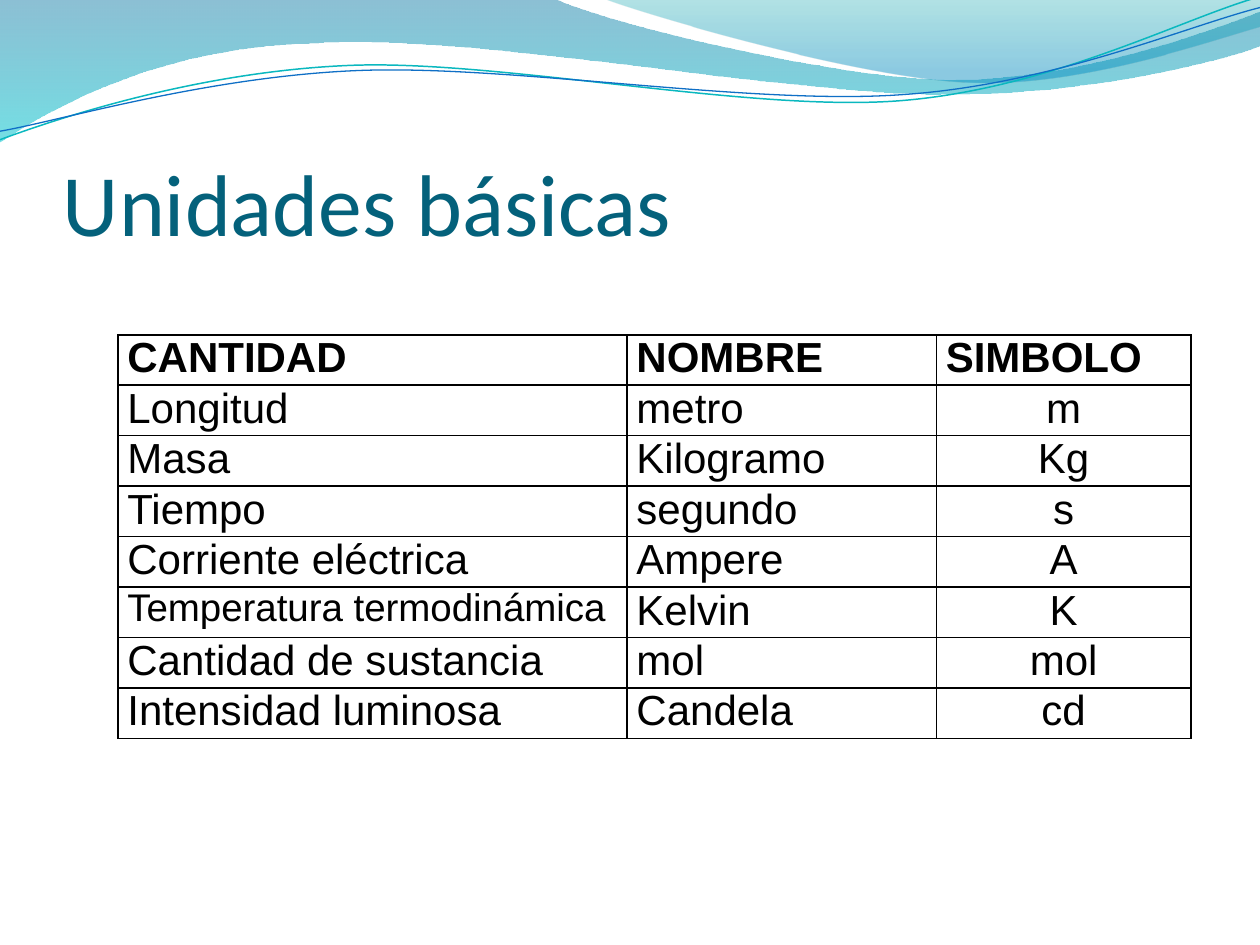
from dataclasses import dataclass

from lxml import etree
from pptx import Presentation
from pptx.dml.color import RGBColor
from pptx.enum.text import MSO_ANCHOR, PP_ALIGN
from pptx.oxml.ns import qn
from pptx.util import Pt

LEFT, CENTER = PP_ALIGN.LEFT, PP_ALIGN.CENTER
BOTTOM, TOP = MSO_ANCHOR.BOTTOM, MSO_ANCHOR.TOP
COLUMN_WIDTHS = (290.9, 176.8, 145.4)
BLACK = "000000"

Point = tuple[float, float]
Segment = tuple[Point, ...]


@dataclass(frozen=True)
class GradientStop:
    position: float
    color: str
    opacity: int


@dataclass(frozen=True)
class Wave:
    start: Point
    segments: tuple[Segment, ...]
    stops: tuple[GradientStop, ...] = ()
    line_color: str = ""
    line_width: float = 0
    rotation: float = 0


@dataclass(frozen=True)
class BaseUnit:
    quantity: str
    name: str
    symbol: str
    quantity_size: float = 24


WAVES = (
    Wave(
        (0, 0),
        (
            ((316.8, -0.7),),
            ((342.7, 12.2), (478.1, 45.4), (545.8, 45.4)),
            ((614.2, 45.4), (689.8, 18.7), (720, 6.5)),
            ((720.7, 25.9),),
            ((707.8, 31.7), (626.4, 54.7), (537.1, 54)),
            ((447.8, 54), (275, 20.2), (185, 24.5)),
            ((92.9, 25.9), (33.1, 59.8), (-0.7, 81.4)),
            ((0, 0),),
        ),
        stops=(GradientStop(0, "0074A1", 45), GradientStop(1, "00C6CF", 55)),
    ),
    Wave(
        (344.9, -0.7),
        (
            ((366.5, 7.9), (491, 44.6), (553.7, 46.8)),
            ((616.3, 49.7), (691.9, 23), (720, 15.1)),
            ((720, 0),),
            ((344.9, -0.7),),
        ),
        stops=(GradientStop(0, "00A1A9", 30), GradientStop(0.8, "008BBF", 45)),
    ),
    Wave(
        (-1.4, 62.9),
        (
            ((33.8, 51.7), (114.1, 29.4), (199.8, 29.9)),
            ((284.9, 30.3), (425.8, 67.3), (512.4, 64.9)),
            ((599, 62.4), (676.5, 25.7), (720.2, 15.5)),
        ),
        line_color="0AB8BF",
        line_width=0.85,
        rotation=357.3,
    ),
    Wave(
        (-1.1, 58),
        (
            ((32.9, 53.8), (118.3, 32.5), (204.1, 33)),
            ((290.6, 33.4), (428.9, 63.8), (515.5, 61.4)),
            ((601.3, 59.6), (678.5, 30.1), (721.4, 21.3)),
        ),
        line_color="0F6FC6",
        line_width=0.75,
        rotation=357.3,
    ),
)

HEADINGS = ("CANTIDAD", "NOMBRE", "SIMBOLO")
BASE_UNITS = (
    BaseUnit("Longitud", "metro", "m"),
    BaseUnit("Masa", "Kilogramo", "Kg"),
    BaseUnit("Tiempo", "segundo", "s"),
    BaseUnit("Corriente eléctrica", "Ampere", "A"),
    BaseUnit("Temperatura termodinámica", "Kelvin", "K", 22),
    BaseUnit("Cantidad de sustancia", "mol", "mol"),
    BaseUnit("Intensidad luminosa", "Candela", "cd"),
)


def set_color(color_format, color: str) -> None:
    color_format.rgb = RGBColor.from_string(color)


def write_text(text_frame, text: str, *, size: float = 24, font: str = "Arial",
               color: str = BLACK, bold: bool = False, align=LEFT) -> None:
    paragraph = text_frame.paragraphs[0]
    paragraph.alignment = align
    paragraph.line_spacing = 1.0
    paragraph.space_before = paragraph.space_after = Pt(0)
    run = paragraph.add_run()
    run.text = text
    run.font.name = font
    run.font.size = Pt(size)
    run.font.bold = bold
    set_color(run.font.color, color)


def bend_segments(shape, segments: tuple[Segment, ...]) -> None:
    lines = iter(list(shape.element.spPr.iter(qn("a:lnTo"))))
    for segment in segments:
        parts = [next(lines) for _ in segment]
        if len(parts) == 3:
            curve = etree.Element(qn("a:cubicBezTo"))
            parts[0].addprevious(curve)
            for part in parts:
                curve.append(part[0])
                part.getparent().remove(part)


def apply_gradient(shape, stops: tuple[GradientStop, ...]) -> None:
    shape.fill.gradient()
    shape.fill.gradient_angle = 270
    for target, stop in zip(shape.fill.gradient_stops, stops):
        target.position = stop.position
        set_color(target.color, stop.color)
    for element, stop in zip(shape.element.spPr.iter(qn("a:srgbClr")), stops):
        etree.SubElement(element, qn("a:alpha"), val=str(stop.opacity * 1000))


def draw_wave(slide, wave: Wave) -> None:
    builder = slide.shapes.build_freeform(*map(Pt, wave.start))
    points = [(Pt(x), Pt(y)) for segment in wave.segments for x, y in segment]
    builder.add_line_segments(points, close=bool(wave.stops))
    shape = builder.convert_to_shape()
    bend_segments(shape, wave.segments)
    shape.rotation = wave.rotation
    shape.shadow.inherit = False
    if wave.stops:
        apply_gradient(shape, wave.stops)
        shape.line.fill.background()
    else:
        shape.fill.background()
        set_color(shape.line.color, wave.line_color)
        shape.line.width = Pt(wave.line_width)


def draw_title(slide, text: str) -> None:
    text_box = slide.shapes.add_textbox(Pt(36), Pt(55.4), Pt(648), Pt(90))
    frame = text_box.text_frame
    frame.word_wrap = True
    frame.vertical_anchor = BOTTOM
    frame.margin_left = frame.margin_right = frame.margin_bottom = Pt(0)
    frame.margin_top = Pt(3.6)
    write_text(frame, text, size=50, font="Calibri", color="04617B")


def format_cell(cell) -> None:
    cell.margin_left = cell.margin_right = Pt(5.4)
    cell.margin_top = cell.margin_bottom = Pt(0)
    cell.vertical_anchor = TOP
    properties = cell._tc.get_or_add_tcPr()
    for side in ("lnL", "lnR", "lnT", "lnB"):
        border = etree.SubElement(properties, qn(f"a:{side}"), w=str(Pt(1)))
        fill = etree.SubElement(border, qn("a:solidFill"))
        etree.SubElement(fill, qn("a:srgbClr"), val=BLACK)
    cell.fill.background()


def draw_units_table(slide, units: tuple[BaseUnit, ...]) -> None:
    frame = slide.shapes.add_table(
        len(units) + 1, len(COLUMN_WIDTHS), Pt(67.4), Pt(191.3),
        Pt(sum(COLUMN_WIDTHS)), Pt(230.4),
    )
    table = frame.table
    table.first_row = table.horz_banding = False
    for column, width in zip(table.columns, COLUMN_WIDTHS):
        column.width = Pt(width)
    for row in table.rows:
        row.height = Pt(0)
    frame.height = Pt(230.4)
    for cell in table.iter_cells():
        format_cell(cell)
    for column, heading in enumerate(HEADINGS):
        write_text(table.cell(0, column).text_frame, heading, bold=True)
    for row, unit in enumerate(units, start=1):
        write_text(table.cell(row, 0).text_frame, unit.quantity, size=unit.quantity_size)
        write_text(table.cell(row, 1).text_frame, unit.name)
        write_text(table.cell(row, 2).text_frame, unit.symbol, align=CENTER)


def main() -> None:
    presentation = Presentation()
    presentation.slide_width, presentation.slide_height = Pt(720), Pt(540)
    slide = presentation.slides.add_slide(presentation.slide_layouts[6])
    for wave in WAVES:
        draw_wave(slide, wave)
    draw_title(slide, "Unidades básicas")
    draw_units_table(slide, BASE_UNITS)
    presentation.save("out.pptx")


if __name__ == "__main__":
    main()
